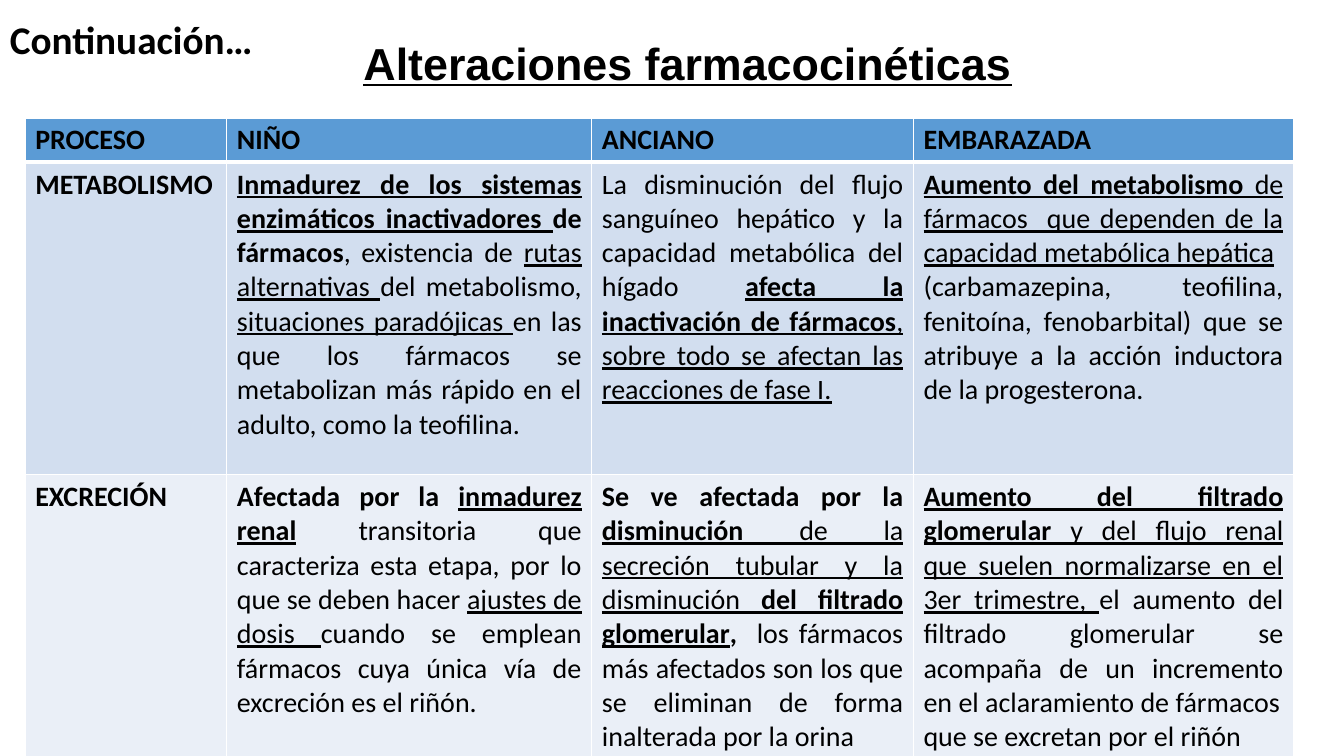
from dataclasses import dataclass

from lxml import etree
from pptx import Presentation
from pptx.dml.color import RGBColor
from pptx.enum import text
from pptx.oxml import ns
from pptx.util import Inches, Pt

BLACK = RGBColor(0x00, 0x00, 0x00)
WHITE = RGBColor(0xFF, 0xFF, 0xFF)
HEADER_BLUE = RGBColor(0x5B, 0x9B, 0xD5)
BAND_BLUE = RGBColor(0xD2, 0xDE, 0xEF)
BAND_PALE = RGBColor(0xEA, 0xEF, 0xF7)


@dataclass(frozen=True)
class Run:
    text: str
    bold: bool = False
    underline: bool = False


@dataclass(frozen=True)
class Row:
    height: float
    fill: RGBColor
    cells: list[list[list[Run]]]  # cells > paragraphs > runs


def bold(words: str) -> Run:
    return Run(words, bold=True)


def under(words: str) -> Run:
    return Run(words, underline=True)


def strong(words: str) -> Run:
    return Run(words, bold=True, underline=True)


COLUMN_WIDTHS = [2, 3.62, 3.19, 3.77]
HEADINGS = ["PROCESO", "NIÑO", "ANCIANO ", "EMBARAZADA"]
ROWS = [
    Row(0.43, HEADER_BLUE, [[[bold(heading)]] for heading in HEADINGS]),
    Row(3.1, BAND_BLUE, [
        [[bold("METABOLISMO")]],
        [[
            strong("Inmadurez de los sistemas enzimáticos inactivadores "),
            bold("de fármacos"),
            Run(", existencia de "),
            under("rutas alternativas "),
            Run("del metabolismo, "),
            under("situaciones paradójicas "),
            Run("en las que los fármacos se metabolizan más rápido en el "
                "adulto, como la teofilina."),
        ]],
        [[
            Run("La disminución del flujo sanguíneo hepático y la capacidad "
                "metabólica del hígado "),
            strong("afecta la inactivación de fármacos"),
            under(", sobre todo se afectan las reacciones de fase I."),
        ]],
        [
            [
                strong("Aumento del metabolismo "),
                under("de fármacos  que dependen de la capacidad metabólica "
                      "hepática"),
            ],
            [Run("(carbamazepina, teofilina, fenitoína, fenobarbital) que se "
                 "atribuye a la acción inductora de la progesterona.")],
        ],
    ]),
    Row(3.1, BAND_PALE, [
        [[bold("EXCRECIÓN ")]],
        [[
            bold("Afectada por la "),
            strong("inmadurez renal"),
            bold(" "),
            Run("transitoria que caracteriza esta etapa, por lo que se deben "
                "hacer "),
            under("ajustes de dosis "),
            Run("cuando se emplean fármacos cuya única vía de excreción es "
                "el riñón."),
        ]],
        [[
            bold("Se ve afectada por la "),
            strong("disminución "),
            under("de la secreción tubular y la disminución "),
            strong("del filtrado glomerular"),
            bold(","),
            Run("  los fármacos más afectados son los que se eliminan de "
                "forma inalterada por la orina"),
        ]],
        [
            [
                strong("Aumento del filtrado glomerular "),
                under("y del flujo renal que suelen normalizarse en el 3er "
                      "trimestre, "),
                Run("el aumento del filtrado glomerular se acompaña de un "
                    "incremento en el aclaramiento de fármacos"),
            ],
            [Run("que se excretan por el riñón")],
        ],
    ]),
]


def write(frame, paragraphs: list[list[Run]], *, size: float,
          font: str = "Calibri", color: RGBColor = BLACK,
          align=text.PP_ALIGN.LEFT) -> None:
    for index, runs in enumerate(paragraphs):
        paragraph = frame.add_paragraph() if index else frame.paragraphs[0]
        paragraph.alignment = align
        for item in runs:
            run = paragraph.add_run()
            run.text = item.text
            run.font.name = font
            run.font.size = Pt(size)
            run.font.bold = item.bold
            run.font.underline = item.underline
            run.font.color.rgb = color


def place(shape, left: float, top: float, width: float, height: float) -> None:
    shape.left, shape.top = Inches(left), Inches(top)
    shape.width, shape.height = Inches(width), Inches(height)


def set_borders(cell, bottom_width: float) -> None:
    properties = cell._tc.get_or_add_tcPr()
    widths = {"a:lnL": 1, "a:lnR": 1, "a:lnT": 1, "a:lnB": bottom_width}
    for position, (tag, width) in enumerate(widths.items()):
        line = etree.Element(ns.qn(tag), w=str(Pt(width)))
        fill = etree.SubElement(line, ns.qn("a:solidFill"))
        etree.SubElement(fill, ns.qn("a:srgbClr"), val=str(WHITE))
        properties.insert(position, line)


def add_process_table(slide) -> None:
    frame = slide.shapes.add_table(
        len(ROWS), len(COLUMN_WIDTHS), Inches(0.25), Inches(1.17),
        Inches(sum(COLUMN_WIDTHS)), Inches(sum(row.height for row in ROWS)))
    table = frame.table
    for column, width in zip(table.columns, COLUMN_WIDTHS):
        column.width = Inches(width)
    for row_index, row in enumerate(ROWS):
        table.rows[row_index].height = Inches(row.height)
        for column_index, paragraphs in enumerate(row.cells):
            cell = table.cell(row_index, column_index)
            cell.fill.solid()
            cell.fill.fore_color.rgb = row.fill
            set_borders(cell, bottom_width=1 if row_index else 3)
            write(cell.text_frame, paragraphs, size=20,
                  align=text.PP_ALIGN.JUSTIFY)


def main() -> None:
    presentation = Presentation()
    presentation.slide_width = Inches(13.33)
    presentation.slide_height = Inches(7.5)
    slide = presentation.slides.add_slide(presentation.slide_layouts[5])

    add_process_table(slide)

    title = slide.shapes.title
    place(title, 3.48, 0.3, 6.68, 0.64)
    title.text_frame.word_wrap = False
    title.text_frame.auto_size = text.MSO_AUTO_SIZE.NONE
    title.text_frame.vertical_anchor = text.MSO_ANCHOR.TOP
    write(title.text_frame, [[strong("Alteraciones farmacocinéticas")]],
          size=32, font="Arial", align=text.PP_ALIGN.CENTER)

    continuation = slide.shapes.add_textbox(
        Inches(0), Inches(0.1), Inches(2.81), Inches(0.57))
    continuation.text_frame.word_wrap = True
    write(continuation.text_frame, [[bold("Continuación…")]], size=28)

    presentation.save("out.pptx")


if __name__ == "__main__":
    main()
